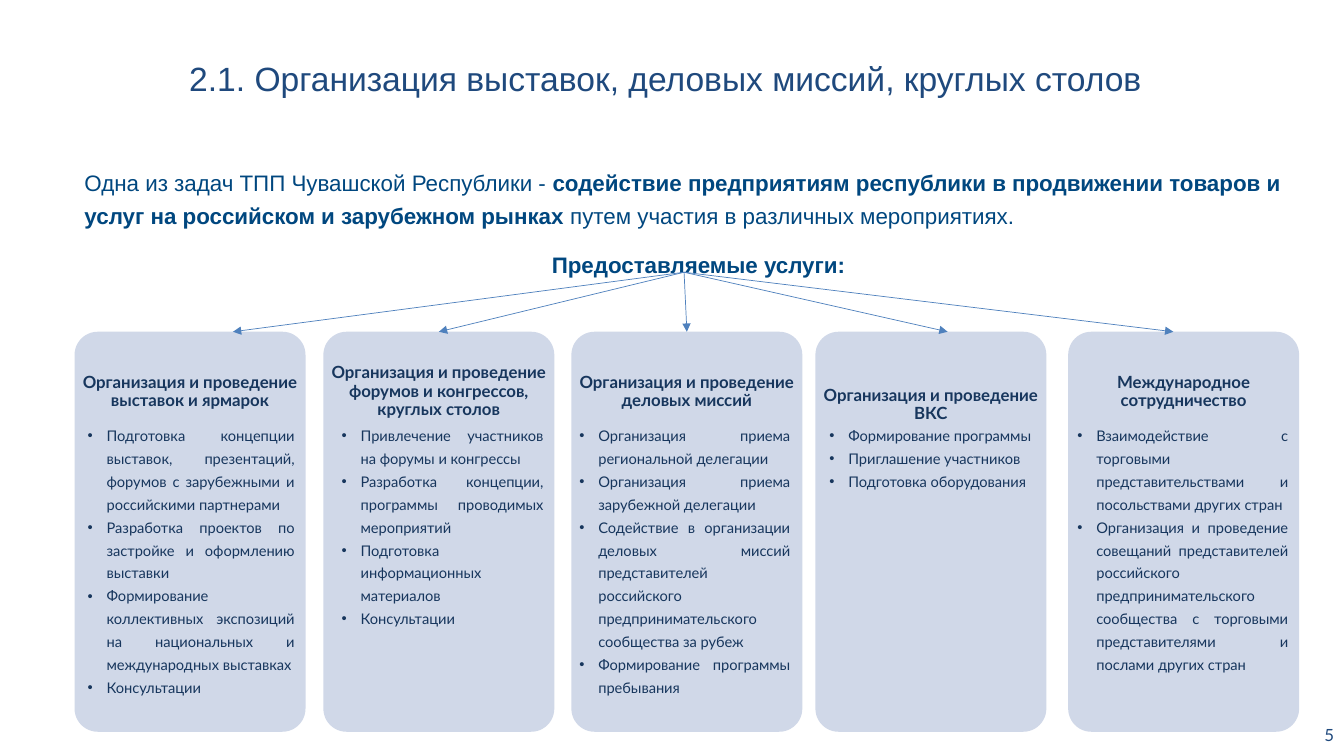
from dataclasses import dataclass

from lxml.etree import SubElement
from pptx import Presentation
from pptx.dml.color import RGBColor
from pptx.enum.shapes import MSO_CONNECTOR, MSO_SHAPE
from pptx.enum.text import MSO_ANCHOR, PP_ALIGN
from pptx.oxml.ns import qn
from pptx.util import Cm, Pt


@dataclass(frozen=True)
class Theme:
    title: RGBColor = RGBColor(0x1F, 0x49, 0x7D)
    intro: RGBColor = RGBColor(0x00, 0x47, 0x7F)
    body: RGBColor = RGBColor(0x17, 0x36, 0x5D)
    card: RGBColor = RGBColor(0xD0, 0xD8, 0xE8)
    arrow: RGBColor = RGBColor(0x4F, 0x81, 0xBD)
    title_size: Pt = Pt(24)
    intro_size: Pt = Pt(16)
    heading_size: Pt = Pt(12)
    body_size: Pt = Pt(10.5)
    number_size: Pt = Pt(12)
    sans: str = "Arial"
    card_font: str = "Lato"


theme = Theme()


def add_box(left, top, width, height, anchor=MSO_ANCHOR.TOP):
    tf = s.shapes.add_textbox(Cm(left), Cm(top), Cm(width), Cm(height)).text_frame
    tf.word_wrap = True
    tf.vertical_anchor = anchor
    return tf


def add_run(p, text, font, size, color, bold=False):
    r = p.add_run()
    r.text = text
    r.font.name = font
    r.font.size = size
    r.font.color.rgb = color
    r.font.bold = bold


prs = Presentation()
prs.slide_width, prs.slide_height = Cm(33.87), Cm(19.05)
s = prs.slides.add_slide(prs.slide_layouts[6])

p = add_box(4.52, 1.47, 29.35, 1.37).paragraphs[0]
p.line_spacing = 0.89
add_run(p, "2.1. Организация выставок, деловых миссий, круглых столов",
        theme.sans, theme.title_size, theme.title)

CARD_TOP, CARD_WIDTH, CARD_HEIGHT = 8.36, 5.82, 10.08
HEADING_HEIGHT, BODY_TOP, BODY_HEIGHT = 3.02, 10.5, 7.2
INDENT = Cm(0.48)
ARROW_START = Cm(17.24), Cm(6.86)

# card left, heading drop, list left, list width, arrow tip, heading, items
services = [
    (1.88, 0, 1.96, 5.72, 5.87, "Организация и проведение выставок и ярмарок", [
        "Подготовка концепции выставок, презентаций, форумов с зарубежными и российскими партнерами",
        "Разработка проектов по застройке и оформлению выставки",
        "Формирование коллективных экспозиций на национальных и международных выставках",
        "Консультации"]),
    (8.15, 0, 8.36, 5.59, 10.95, "Организация и проведение форумов и конгрессов, круглых столов", [
        "Привлечение участников на форумы и конгрессы",
        "Разработка концепции, программы проводимых мероприятий",
        "Подготовка информационных материалов",
        "Консультации"]),
    (14.4, 0, 14.35, 5.82, 17.3, "Организация и проведение деловых миссий", [
        "Организация приема региональной делегации",
        "Организация приема зарубежной делегации",
        "Содействие в организации деловых миссий представителей российского "
        "предпринимательского сообщества за рубеж",
        "Формирование программы пребывания"]),
    (20.55, 0.33, 20.65, 5.82, 23.88, "Организация и проведение ВКС", [
        "Формирование программы",
        "Приглашение участников",
        "Подготовка оборудования"]),
    (26.92, 0, 26.9, 5.82, 29.57, "Международное сотрудничество", [
        "Взаимодействие с торговыми представительствами и посольствами других стран",
        "Организация и проведение совещаний представителей российского предпринимательского "
        "сообщества с торговыми представителями и послами других стран"]),
]

tf = add_box(1.88, 4.01, 31.45, 4.32)
p = tf.paragraphs[0]
for text, bold in [
    ("Одна из задач ТПП Чувашской Республики - ", False),
    ("содействие предприятиям республики в продвижении товаров и услуг "
     "на российском и зарубежном рынках", True),
    (" путем участия в различных мероприятиях.", False),
]:
    add_run(p, text, theme.sans, theme.intro_size, theme.intro, bold)
p.line_spacing = 1.2
p.space_after = Pt(2)
p = tf.add_paragraph()
p.alignment = PP_ALIGN.CENTER
p.line_spacing = 1.2
p.space_before = Pt(10)
add_run(p, "Предоставляемые услуги:", theme.sans, theme.intro_size, theme.intro, True)

for left, drop, list_left, list_width, tip, heading, items in services:
    card = s.shapes.add_shape(MSO_SHAPE.ROUNDED_RECTANGLE, Cm(left), Cm(CARD_TOP),
                              Cm(CARD_WIDTH), Cm(CARD_HEIGHT))
    card.adjustments[0] = 0.1
    card.shadow.inherit = False
    card.fill.solid()
    card.fill.fore_color.rgb = theme.card
    card.line.fill.background()

    tf = add_box(left, CARD_TOP + drop, CARD_WIDTH, HEADING_HEIGHT, MSO_ANCHOR.MIDDLE)
    tf.margin_left = tf.margin_right = tf.margin_top = tf.margin_bottom = Cm(0.13)
    p = tf.paragraphs[0]
    p.alignment = PP_ALIGN.CENTER
    p.line_spacing = 0.9
    add_run(p, heading, theme.card_font, theme.heading_size, theme.body, True)

    tf = add_box(list_left, BODY_TOP, list_width, BODY_HEIGHT)
    for i, item in enumerate(items):
        p = tf.add_paragraph() if i else tf.paragraphs[0]
        p.alignment = PP_ALIGN.JUSTIFY
        p.line_spacing = 1.3
        pPr = p._p.get_or_add_pPr()
        pPr.set("marL", str(INDENT))
        pPr.set("indent", str(-INDENT))
        SubElement(pPr, qn("a:buFont"), typeface=theme.sans)
        SubElement(pPr, qn("a:buChar"), char="•")
        add_run(p, item, theme.card_font, theme.body_size, theme.body)

    arrow = s.shapes.add_connector(MSO_CONNECTOR.STRAIGHT, *ARROW_START, Cm(tip), Cm(CARD_TOP))
    if abs(tip - left - CARD_WIDTH / 2) < 0.15:
        arrow.end_connect(card, 0)
    arrow.line.color.rgb = theme.arrow
    arrow.line.width = Pt(0.5)
    SubElement(arrow.line._get_or_add_ln(), qn("a:tailEnd"), type="triangle")
    SubElement(arrow._element.spPr, qn("a:effectLst"))

p = add_box(29.44, 17.96, 4.43, 1.12, MSO_ANCHOR.MIDDLE).paragraphs[0]
p.alignment = PP_ALIGN.RIGHT
add_run(p, "5", theme.card_font, theme.number_size, theme.title)

prs.save("out.pptx")
